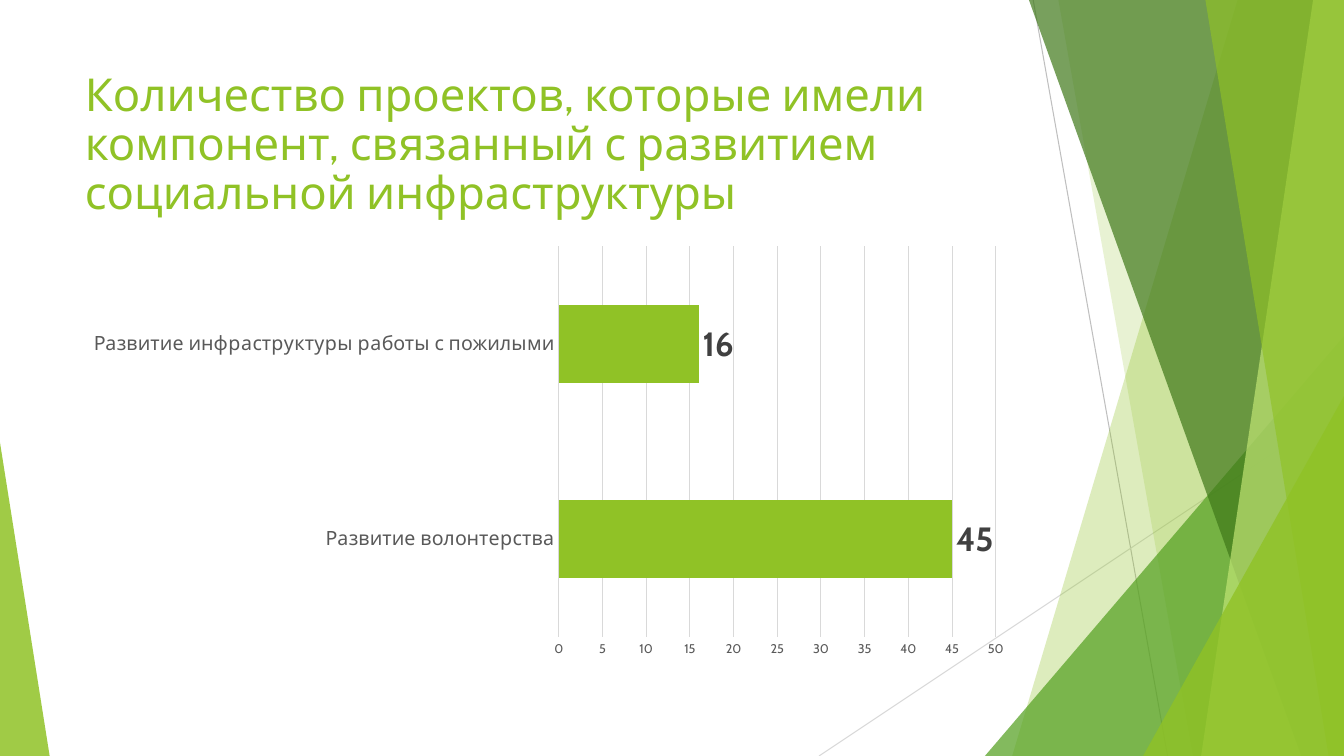
from collections import namedtuple

from lxml import etree
from pptx import Presentation
from pptx import util as u
from pptx.chart import data as chart_data
from pptx.dml.color import RGBColor
from pptx.enum import chart as chart_enum, shapes, text
from pptx.oxml import ns

Box = namedtuple("Box", "left top width height")

SLIDE = Box(0, 0, 960, 540)
TITLE = Box(53.5, 48, 677, 104)
CHART = Box(53.5, 170, 677, 305)

FONT = "Cabin"
LIME = RGBColor(0x90, 0xC2, 0x26)
PALE_LIME = RGBColor(0xC0, 0xE4, 0x74)
GREEN = RGBColor(0x54, 0xA0, 0x21)
DARK_GREEN = RGBColor(0x3F, 0x78, 0x19)
LINE_GRAY = RGBColor(0xBF, 0xBF, 0xBF)
GRID_GRAY = RGBColor(0xD9, 0xD9, 0xD9)
AXIS_GRAY = RGBColor(0x59, 0x59, 0x59)
LABEL_GRAY = RGBColor(0x40, 0x40, 0x40)


def in_points(*lengths):
    return [u.Pt(length) for length in lengths]


def paint(shape, color, opacity):
    """Give a shape a see-through fill; opacity is in percent."""
    shape.shadow.inherit = False
    shape.fill.solid()
    shape.fill.fore_color.rgb = color
    shape.line.fill.background()
    fill_color = shape.fill._xPr.find(".//" + ns.qn("a:srgbClr"))
    etree.SubElement(fill_color, ns.qn("a:alpha"), val=str(opacity * 1000))


def add_thin_line(page, box, start, end, color):
    line = page.shapes.add_connector(
        shapes.MSO_CONNECTOR.STRAIGHT,
        *in_points(box.left + start[0], box.top + start[1],
                   box.left + end[0], box.top + end[1]))
    line.line.color.rgb = color
    line.line.width = u.Pt(0.75)
    etree.SubElement(line._element.spPr, ns.qn("a:effectLst"))


def add_facet(page, box, top_x, bottom_x, color, opacity):
    """Fill the box from a slanted left edge to its right side."""
    right, bottom = box.left + box.width, box.top + box.height
    corners = [(box.left + top_x, box.top), (right, box.top),
               (right, bottom), (box.left + bottom_x, bottom)]
    points = [in_points(*corner) for corner in corners]
    builder = page.shapes.build_freeform(*points[0])
    builder.add_line_segments(points[1:], close=True)
    paint(builder.convert_to_shape(), color, opacity)


def add_corner(page, box, width, height, on_right, color, opacity):
    """Place a right-angled triangle in a lower corner of the box."""
    left = box.left + (box.width - width if on_right else 0)
    corner = page.shapes.add_shape(
        shapes.MSO_SHAPE.ISOSCELES_TRIANGLE,
        *in_points(left, box.top + box.height - height, width, height))
    corner.adjustments[0] = 1 if on_right else 0
    paint(corner, color, opacity)


def add_background(page, box):
    add_thin_line(page, box, (738, 0), (834, 540), LINE_GRAY)
    add_thin_line(page, box, (960, 290), (585, 540), GRID_GRAY)
    add_facet(page, box, 884, 723, LIME, 30)
    add_facet(page, box, 756, 852, LIME, 20)
    add_corner(page, box, 256.5, 300, True, GREEN, 72)
    add_facet(page, box, 735, 929.5, DARK_GREEN, 70)
    add_facet(page, box, 938, 858, PALE_LIME, 70)
    add_facet(page, box, 861, 949, LIME, 65)
    add_corner(page, box, 143.5, 257, True, LIME, 80)
    add_corner(page, box, 35.5, 224, False, LIME, 85)


def style_font(font, size, color, bold=False):
    font.name = FONT
    font.size = u.Pt(size)
    font.color.rgb = color
    font.bold = bold


def fill_title(page, box):
    title = page.shapes.title
    title.left, title.top, title.width, title.height = in_points(*box)
    frame = title.text_frame
    frame.text = ("Количество проектов, которые имели компонент, "
                  "связанный с развитием социальной инфраструктуры")
    frame.word_wrap = True
    frame.auto_size = text.MSO_AUTO_SIZE.NONE
    frame.vertical_anchor = text.MSO_ANCHOR.TOP
    para = frame.paragraphs[0]
    para.alignment = text.PP_ALIGN.LEFT
    para.line_spacing = 0.9
    style_font(para.runs[0].font, 32.4, LIME)


def style_axis(axis, size):
    axis.major_tick_mark = chart_enum.XL_TICK_MARK.NONE
    axis.minor_tick_mark = chart_enum.XL_TICK_MARK.NONE
    axis.format.line.fill.background()
    style_font(axis.tick_labels.font, size, AXIS_GRAY)


def add_project_chart(page, box):
    projects = chart_data.CategoryChartData()
    projects.categories = ["Развитие волонтерства",
                           "Развитие инфраструктуры работы с пожилыми"]
    projects.add_series("Количество проектов", (45, 16))
    chart = page.shapes.add_chart(
        chart_enum.XL_CHART_TYPE.BAR_CLUSTERED,
        *in_points(*box), projects).chart
    chart.has_legend = False
    chart.has_title = False
    style_font(chart.font, 10, RGBColor(0, 0, 0))

    style_axis(chart.category_axis, 14)
    value_axis = chart.value_axis
    style_axis(value_axis, 9)
    value_axis.minimum_scale, value_axis.maximum_scale = 0, 50
    value_axis.major_unit = 5
    value_axis.has_major_gridlines = True
    grid = value_axis.major_gridlines.format.line
    grid.color.rgb = GRID_GRAY
    grid.width = u.Pt(0.75)

    plot = chart.plots[0]
    plot.gap_width = 150
    plot.vary_by_categories = False
    bars = plot.series[0]
    bars.format.fill.solid()
    bars.format.fill.fore_color.rgb = LIME
    labels = bars.data_labels
    labels.show_value = True
    labels.position = chart_enum.XL_LABEL_POSITION.OUTSIDE_END
    style_font(labels.font, 24, LABEL_GRAY, bold=True)


def main():
    deck = Presentation()
    deck.slide_width, deck.slide_height = in_points(SLIDE.width, SLIDE.height)
    title_only = deck.slide_layouts[5]
    page = deck.slides.add_slide(title_only)
    add_background(page, SLIDE)
    fill_title(page, TITLE)
    add_project_chart(page, CHART)
    deck.save("out.pptx")


if __name__ == "__main__":
    main()
